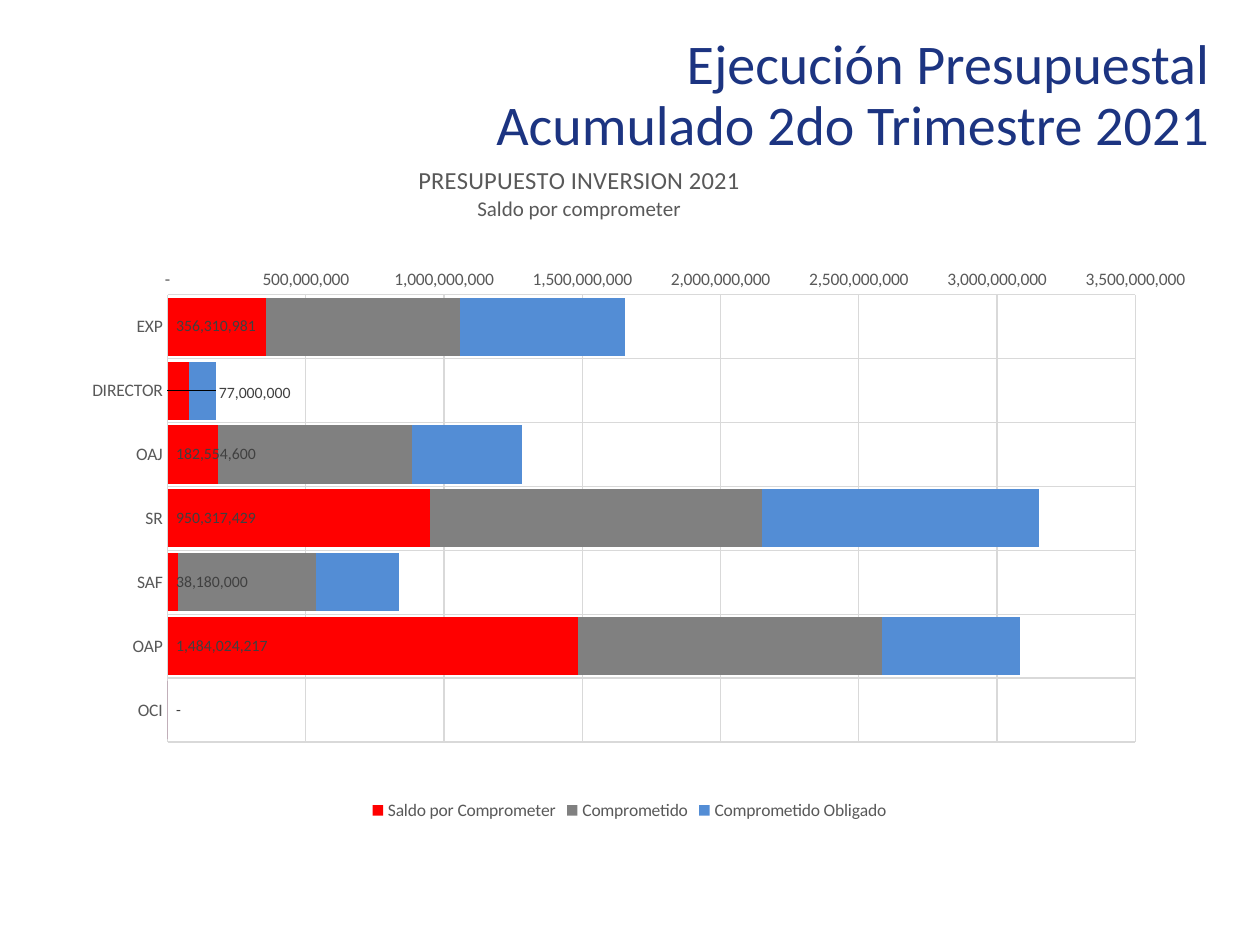
from dataclasses import dataclass

from lxml.etree import SubElement
from pptx import Presentation
from pptx.chart.data import CategoryChartData as Data
from pptx.dml.color import RGBColor as RGB
from pptx.enum.chart import XL_CHART_TYPE as Kind
from pptx.enum.chart import XL_LABEL_POSITION as Place
from pptx.enum.chart import XL_LEGEND_POSITION as Side
from pptx.enum.chart import XL_TICK_MARK as Tick
from pptx.enum.text import MSO_ANCHOR as Anchor
from pptx.enum.text import PP_ALIGN as Align
from pptx.oxml import parse_xml
from pptx.oxml.ns import nsdecls, qn
from pptx.util import Inches, Pt


@dataclass(frozen=True)
class Theme:
    """Colours, type sizes and formats of the slide."""
    font: str = "Calibri"
    navy: str = "1C3481"
    text: str = "595959"
    dark: str = "404040"
    grid: str = "D9D9D9"
    head: int = 32
    title: int = 14
    sub: int = 12
    body: int = 10
    label: int = 9
    money: str = r'_(* #,##0_);_(* \(#,##0\);_(* "-"_);_(@_)'


THEME = Theme()
UNITS = ["EXP", "DIRECTOR", "OAJ", "SR", "SAF", "OAP", "OCI"]
M = 1_000_000
SERIES = [
    ("Saldo por Comprometer", "FF0000",
     [356310981, 77000000, 182554600, 950317429, 38180000, 1484024217, 0]),
    ("Comprometido", "808080",
     [n * M for n in (700, 0, 700, 1200, 500, 1100, 0)]),
    ("Comprometido Obligado", "538DD5",
     [n * M for n in (600, 100, 400, 1000, 300, 500, 0)]),
]
NO_LEAD = (
    f"<c:extLst {nsdecls('c')}>"
    '<c:ext uri="{CE6537A1-D6FC-4f65-9D91-7224C49458BB}" '
    'xmlns:c15="http://schemas.microsoft.com/office/drawing/2012/chart">'
    '<c15:showLeaderLines val="0"/></c:ext></c:extLst>'
)


def style(font, size, color):
    """Set face, size and colour of a font."""
    font.name, font.size, font.bold = THEME.font, Pt(size), False
    font.color.rgb = RGB.from_string(color)


def rule(line):
    """Draw a line in the grid colour."""
    line.color.rgb = RGB.from_string(THEME.grid)
    line.width = Pt(0.75)


def layout(parent, index, box, spot, **modes):
    """Place a chart part by inches within the chart box."""
    for old in parent.findall(qn("c:layout")):
        parent.remove(old)
    node = parse_xml(f"<c:layout {nsdecls('c')}><c:manualLayout/></c:layout>")
    sizes = (box[2], box[3]) * 2
    parts = {tag: Inches(n) / size for tag, n, size in zip("xywh", spot, sizes)}
    for tag, val in (modes | parts).items():
        SubElement(node[0], qn(f"c:{tag}")).set("val", str(val))
    parent.insert(index, node)


def heading(slide, box):
    """Place the two-line slide heading."""
    frame = slide.shapes.add_textbox(*box).text_frame
    frame.word_wrap, frame.vertical_anchor = True, Anchor.TOP
    para = frame.paragraphs[0]
    para.alignment, para.line_spacing = Align.RIGHT, 0.9
    for i, text in enumerate(["Ejecución Presupuestal",
                              "Acumulado 2do Trimestre 2021"]):
        if i:
            para.add_line_break()
        run = para.add_run()
        run.text = text
        style(run.font, THEME.head, THEME.navy)


def caption(chart, box):
    """Write the chart title and subtitle."""
    frame = chart.chart_title.text_frame
    lines = [("PRESUPUESTO INVERSION 2021", THEME.title),
             ("Saldo por comprometer", THEME.sub)]
    for i, (text, size) in enumerate(lines):
        para = frame.add_paragraph() if i else frame.paragraphs[0]
        run = para.add_run()
        run.text = text
        style(run.font, size, THEME.text)
    layout(chart.element.xpath(".//c:title")[0], 1, box, (3.09, 0.11),
           xMode="edge", yMode="edge")


def axes(chart):
    """Format both axes and their grids."""
    for axis in (chart.category_axis, chart.value_axis):
        axis.has_major_gridlines = True
        rule(axis.major_gridlines.format.line)
        axis.major_tick_mark = axis.minor_tick_mark = Tick.NONE
        style(axis.tick_labels.font, THEME.body, THEME.text)
    chart.category_axis.reverse_order = True
    rule(chart.category_axis.format.line)
    value = chart.value_axis
    value.format.line.fill.background()
    value.minimum_scale, value.maximum_scale = 0, 3500 * M
    value.major_unit = 500 * M
    value.tick_labels.number_format = THEME.money
    value.tick_labels.number_format_is_linked = False


def labels(chart, box):
    """Label the first series and move the label of DIRECTOR."""
    first = chart.plots[0].series[0]
    point = first.points[UNITS.index("DIRECTOR")].data_label
    for label in (first.data_labels, point):
        style(label.font, THEME.label, THEME.dark)
        label.position = Place.INSIDE_BASE
    first.data_labels.show_value = True
    first.data_labels.number_format = THEME.money
    first.data_labels.number_format_is_linked = False
    node = chart.element.xpath(".//c:dLbl")[0]
    form = parse_xml(f"<c:numFmt {nsdecls('c')} sourceLinked='0'/>")
    form.set("formatCode", THEME.money)
    node.insert(1, form)
    layout(node, 1, box, (0.34, 0.02))
    group = node.getparent()
    for lead in group.findall(qn("c:showLeaderLines")):
        group.remove(lead)
    group.append(parse_xml(NO_LEAD))


def budget(slide, box):
    """Place the stacked budget chart."""
    data = Data(number_format=THEME.money)
    data.categories = UNITS
    for name, _, vals in SERIES:
        data.add_series(name, vals)
    chart = slide.shapes.add_chart(Kind.BAR_STACKED, *box, data).chart
    style(chart.font, THEME.body, THEME.text)
    plot = chart.plots[0]
    plot.gap_width, plot.overlap, plot.vary_by_categories = 10, 100, False
    for part, (_, color, _) in zip(plot.series, SERIES):
        part.format.fill.solid()
        part.format.fill.fore_color.rgb = RGB.from_string(color)
        part.invert_if_negative = False
    caption(chart, box)
    axes(chart)
    labels(chart, box)
    chart.has_legend = True
    chart.legend.position = Side.BOTTOM
    chart.legend.include_in_layout = False
    style(chart.legend.font, THEME.body, THEME.text)
    layout(chart.element.xpath(".//c:plotArea")[0], 0, box,
           (1.13, 1.18, 7.68, 3.55),
           layoutTarget="inner", xMode="edge", yMode="edge")


def main():
    """Build and save the slide."""
    deck = Presentation()
    deck.slide_width, deck.slide_height = Inches(10), Inches(7.5)
    slide = deck.slides.add_slide(deck.slide_layouts[6])
    heading(slide, [Inches(n) for n in (1.08, 0.24, 8.62, 1.45)])
    budget(slide, [Inches(n) for n in (0.2, 1.16, 9.59, 5.39)])
    deck.save("out.pptx")


if __name__ == "__main__":
    main()
